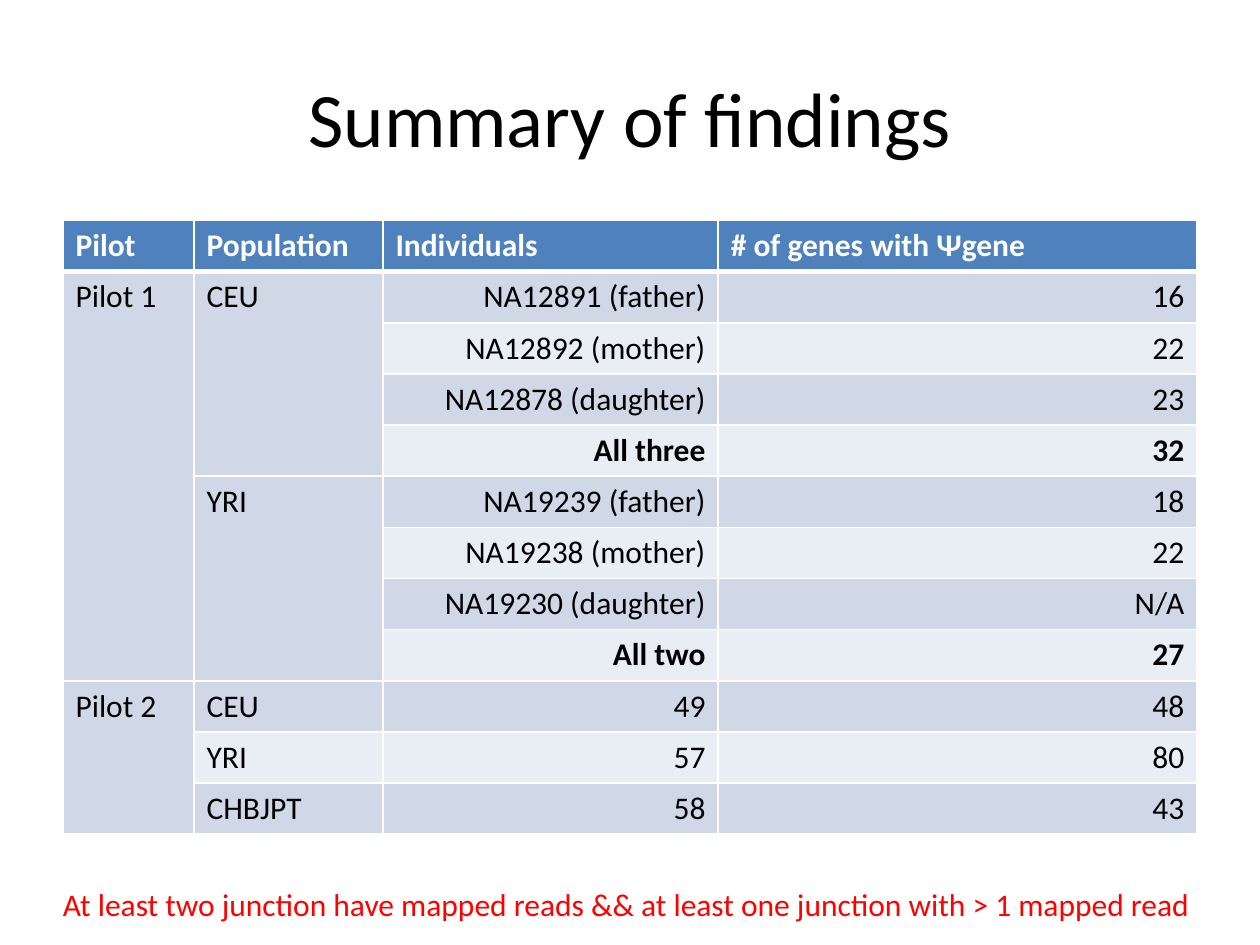
from dataclasses import dataclass

from lxml import etree
from pptx import Presentation
from pptx.dml.color import RGBColor
from pptx.enum.text import MSO_ANCHOR, MSO_AUTO_SIZE, PP_ALIGN
from pptx.oxml.ns import qn
from pptx.util import Inches, Pt

LEFT, CENTER, RIGHT = PP_ALIGN.LEFT, PP_ALIGN.CENTER, PP_ALIGN.RIGHT
MIDDLE = MSO_ANCHOR.MIDDLE
GROW = MSO_AUTO_SIZE.SHAPE_TO_FIT_TEXT
WIDTH, HEIGHT = Inches(10), Inches(7.5)
FONT = "Calibri"
BLACK, WHITE, RED = "000000", "FFFFFF", "FF0000"
HEADER_FILL, DARK_BAND, LIGHT_BAND = "4F81BD", "D0D8E8", "E9EDF4"
THIN, THICK = 1, 3
COLUMN_WIDTHS = (1.04, 1.5, 2.66, 3.8)
HEADINGS = ("Pilot", "Population", "Individuals", "# of genes with Ψgene")


@dataclass(frozen=True)
class Box:
    """Place and size as shares of the slide."""
    left: float
    top: float
    width: float
    height: float

    def lengths(self) -> tuple[int, int, int, int]:
        return (int(self.left * WIDTH), int(self.top * HEIGHT),
                int(self.width * WIDTH), int(self.height * HEIGHT))


@dataclass(frozen=True)
class Finding:
    individuals: str
    genes: str


@dataclass(frozen=True)
class Population:
    pilot: str
    name: str
    findings: tuple[Finding, ...]


TITLE_BOX = Box(0.05, 0.04, 0.9, 1 / 6)
TABLE_BOX = Box(0.05, 0.7 / 3, 0.9, 0.65)
NOTE_BOX = Box(0.04, 0.93, 0.924, 0.054)
POPULATIONS = (
    Population("Pilot 1", "CEU", (
        Finding("NA12891 (father)", "16"),
        Finding("NA12892 (mother)", "22"),
        Finding("NA12878 (daughter)", "23"),
        Finding("All three", "32"))),
    Population("Pilot 1", "YRI", (
        Finding("NA19239 (father)", "18"),
        Finding("NA19238 (mother)", "22"),
        Finding("NA19230 (daughter)", "N/A"),
        Finding("All two", "27"))),
    Population("Pilot 2", "CEU", (Finding("49", "48"),)),
    Population("Pilot 2", "YRI", (Finding("57", "80"),)),
    Population("Pilot 2", "CHBJPT", (Finding("58", "43"),)),
)


def rgb(value: str) -> RGBColor:
    return RGBColor.from_string(value)


def write(frame, text: str, size: float, color: str, align=LEFT, bold: bool = False) -> None:
    paragraph = frame.paragraphs[0]
    paragraph.alignment = align
    run = paragraph.add_run()
    run.text = text
    run.font.name = FONT
    run.font.size = Pt(size)
    run.font.bold = bold
    run.font.color.rgb = rgb(color)


def paint_cell(cell, fill: str, top: float, bottom: float) -> None:
    properties = cell._tc.get_or_add_tcPr()
    for side, points in (("L", THIN), ("R", THIN), ("T", top), ("B", bottom)):
        line = etree.SubElement(properties, qn(f"a:ln{side}"), w=str(Pt(points)))
        solid = etree.SubElement(line, qn("a:solidFill"))
        etree.SubElement(solid, qn("a:srgbClr"), val=WHITE)
    cell.fill.solid()
    cell.fill.fore_color.rgb = rgb(fill)


def merge_label(table, column: int, first: int, count: int, text: str) -> None:
    cell = table.cell(first, column)
    if count > 1:
        cell.merge(table.cell(first + count - 1, column))
    write(cell.text_frame, text, 18, BLACK)


def draw_findings(slide) -> None:
    row_total = 1 + sum(len(population.findings) for population in POPULATIONS)
    table = slide.shapes.add_table(row_total, len(HEADINGS), *TABLE_BOX.lengths()).table
    for column, width in zip(table.columns, COLUMN_WIDTHS):
        column.width = Inches(width)
    for index, row in enumerate(table.rows):
        row.height = int(TABLE_BOX.height * HEIGHT / row_total)
        fill = HEADER_FILL if index == 0 else DARK_BAND if index % 2 else LIGHT_BAND
        for cell in row.cells:
            paint_cell(cell, fill, THICK if index == 1 else THIN,
                       THICK if index == 0 else THIN)
    for column, heading in enumerate(HEADINGS):
        write(table.cell(0, column).text_frame, heading, 18, WHITE, bold=True)

    row_index = 1
    pilot_rows: dict[str, list[int]] = {}
    for population in POPULATIONS:
        merge_label(table, 1, row_index, len(population.findings), population.name)
        for finding in population.findings:
            is_total = finding.individuals.startswith("All")
            for column, text in ((2, finding.individuals), (3, finding.genes)):
                write(table.cell(row_index, column).text_frame, text, 18, BLACK,
                      RIGHT, is_total)
            pilot_rows.setdefault(population.pilot, []).append(row_index)
            row_index += 1
    for pilot, rows in pilot_rows.items():
        merge_label(table, 0, rows[0], len(rows), pilot)


def draw_title(slide, text: str) -> None:
    title = slide.shapes.title
    title.left, title.top, title.width, title.height = TITLE_BOX.lengths()
    title.text_frame.vertical_anchor = MIDDLE
    write(title.text_frame, text, 44, BLACK, CENTER)


def draw_note(slide, text: str) -> None:
    frame = slide.shapes.add_textbox(*NOTE_BOX.lengths()).text_frame
    frame.word_wrap = False
    frame.auto_size = GROW
    write(frame, text, 18, RED)


def main() -> None:
    """Build the slide that sums up the genes found per pilot and population."""
    presentation = Presentation()
    presentation.slide_width, presentation.slide_height = WIDTH, HEIGHT
    slide = presentation.slides.add_slide(presentation.slide_layouts.get_by_name("Title Only"))
    draw_title(slide, "Summary of findings")
    draw_findings(slide)
    draw_note(slide, "At least two junction have mapped reads && "
                     "at least one junction with > 1 mapped read")
    presentation.save("out.pptx")


if __name__ == "__main__":
    main()
